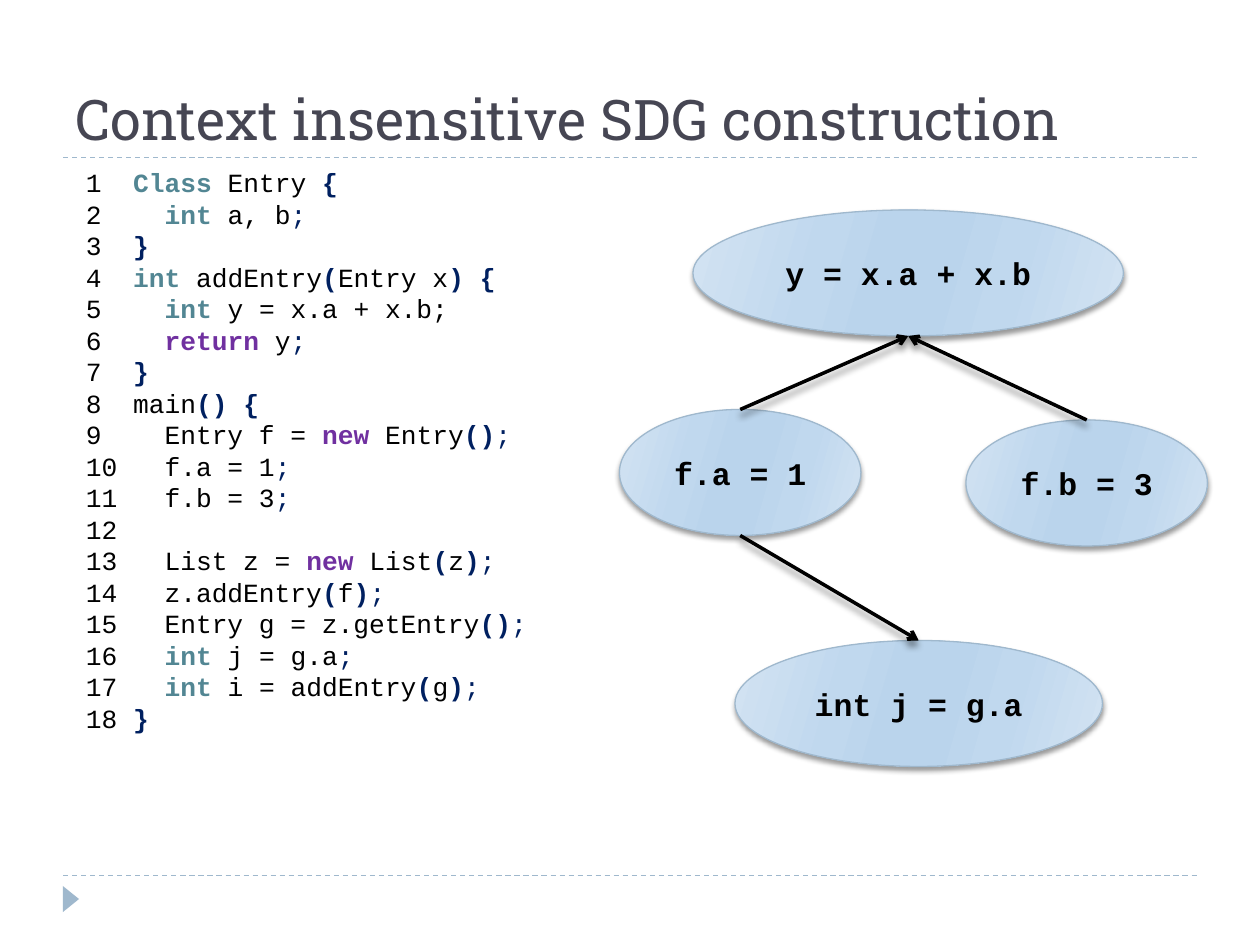
import itertools
import pptx
import pptx.util
import pptx.dml.color
import pptx.enum.dml
import pptx.enum.shapes
import pptx.enum.text
import pptx.oxml
import pptx.oxml.ns

COLS, ROWS = 120, 90
UNIT = pptx.util.Inches(10) / COLS
MONO, SLAB = "Courier New", "Roboto Slab"
HUES = {"title": "464653", "edge": "9FB8CD", "ink": "000000", "type": "528693",
        "mark": "002060", "word": "7030A0"}
GLOW = ((0, "D3E3F2"), (30, "C0D8EE"), (45, "BAD4EC"),
        (55, "BAD4EC"), (73, "C0D8EE"), (100, "D3E3F2"))
WORDS = {"Class": "type", "int": "type", "return": "word", "new": "word"}
PLAIN = {5}
CODE = """Class Entry {
  int a, b;
}
int addEntry(Entry x) {
  int y = x.a + x.b;
  return y;
}
main() {
  Entry f = new Entry();
  f.a = 1;
  f.b = 3;

  List z = new List(z);
  z.addEntry(f);
  Entry g = z.getEntry();
  int j = g.a;
  int i = addEntry(g);
}""".split("\n")
NODES = {"sum": ("y = x.a + x.b", (66, 20, 41, 12)),
         "first": ("f.a = 1", (59, 39, 23, 12)),
         "second": ("f.b = 3", (92, 40, 23, 12)),
         "read": ("int j = g.a", (70, 61, 35, 12))}
LINKS = (("first", "top", "sum", "base"), ("second", "top", "sum", "base"),
         ("first", "base", "read", "top"))


def grid(*cells):
    """Turn grid cells into lengths."""
    return [pptx.util.Emu(round(cell * UNIT)) for cell in cells]


def hue(name):
    """Return a named colour."""
    return pptx.dml.color.RGBColor.from_string(HUES[name])


def style(font, size, face, tone, bold=False):
    """Set the look of a font."""
    font.size, font.name, font.bold = pptx.util.Pt(size), face, bold
    font.color.rgb = hue(tone)


def parse(text):
    """Build an XML element from a DrawingML string."""
    head, tail = text.split(" ", 1)
    return pptx.oxml.parse_xml(f"{head} {pptx.oxml.ns.nsdecls('a')} {tail}")


def shade(item, blur, drop):
    """Cast a soft shadow straight down."""
    item._element.spPr.append(parse(
        f'<a:effectLst ><a:outerShdw blurRad="{pptx.util.Pt(blur)}" '
        f'dist="{pptx.util.Pt(drop)}" dir="5400000" rotWithShape="0">'
        '<a:srgbClr val="000000"><a:alpha val="40000"/></a:srgbClr>'
        '</a:outerShdw></a:effectLst>'))


def draw(slide, start, end, tone, width):
    """Draw a straight line between two grid points."""
    line = slide.shapes.add_connector(
        pptx.enum.shapes.MSO_CONNECTOR.STRAIGHT, *grid(*start, *end))
    line.line.color.rgb = hue(tone)
    line.line.width = pptx.util.Pt(width)
    return line


def rule(slide, box):
    """Draw a dashed rule along the top of a box."""
    left, top, width, _ = box
    line = draw(slide, (left, top), (left + width, top), "edge", 0.75)
    line.line.dash_style = pptx.enum.dml.MSO_LINE.DASH
    line._element.spPr.append(parse("<a:effectLst />"))


def foot(slide, box):
    """Draw the footer rule with its pointer."""
    rule(slide, box)
    left, top, _, _ = box
    mark = slide.shapes.add_shape(pptx.enum.shapes.MSO_SHAPE.ISOSCELES_TRIANGLE,
                                  *grid(left - 0.5, top + 1.45, 2.5, 1.55))
    mark.rotation = 90
    mark.shadow.inherit = False
    mark.fill.solid()
    mark.fill.fore_color.rgb = hue("edge")
    mark.line.fill.background()


def title(slide, box):
    """Place the heading at the foot of its box."""
    frame = slide.shapes.add_textbox(*grid(*box)).text_frame
    frame.word_wrap = True
    frame.vertical_anchor = pptx.enum.text.MSO_ANCHOR.BOTTOM
    para = frame.paragraphs[0]
    para.text = "Context insensitive SDG construction"
    style(para.font, 32, SLAB, "title")


def kind(char):
    """Sort a character into its token class."""
    return "word" if char.isalnum() else char if char == ";" else \
        "brace" if char in "(){}" else "other"


def tokens(line, plain):
    """Yield each token with its colour and weight."""
    for sort, chars in itertools.groupby(line, kind):
        text = "".join(chars)
        tone = WORDS.get(text, "ink")
        if sort == "brace" or sort == ";" and not plain:
            tone = "mark"
        yield text, tone, tone != "ink" and sort != ";"


def code(slide, box):
    """List the numbered program with coloured syntax."""
    frame = slide.shapes.add_textbox(*grid(*box)).text_frame
    frame.word_wrap = True
    frame.margin_top = pptx.util.Inches(0.07)
    for num, line in enumerate(CODE, 1):
        para = frame.paragraphs[0] if num == 1 else frame.add_paragraph()
        para.line_spacing = pptx.util.Pt(18)
        label = f"{num:<3}" if line else str(num)
        for text, tone, bold in [(label, "ink", False), *tokens(line, num in PLAIN)]:
            run = para.add_run()
            run.text = text
            style(run.font, 15, MONO, tone, bold)


def node(slide, text, box):
    """Place one shaded ellipse with its statement."""
    oval = slide.shapes.add_shape(pptx.enum.shapes.MSO_SHAPE.OVAL, *grid(*box))
    oval.fill.gradient()
    fill = oval._element.spPr.find(pptx.oxml.ns.qn("a:gradFill"))
    stops = fill.find(pptx.oxml.ns.qn("a:gsLst"))
    stops[:] = [parse(f'<a:gs pos="{pos * 1000}"><a:srgbClr val="{tint}"/></a:gs>')
                for pos, tint in GLOW]
    fill.find(pptx.oxml.ns.qn("a:lin")).set("ang", str(16 * 60000))
    oval.line.color.rgb = hue("edge")
    oval.line.width = pptx.util.Pt(0.75)
    shade(oval, 3, 2)
    frame = oval.text_frame
    frame.vertical_anchor = pptx.enum.text.MSO_ANCHOR.MIDDLE
    para = frame.paragraphs[0]
    para.text = text
    para.alignment = pptx.enum.text.PP_ALIGN.CENTER
    style(para.font, 18, MONO, "ink", True)


def port(name, side):
    """Find the top or base point of a node."""
    left, top, width, height = NODES[name][1]
    return left + width / 2, top + (height if side == "base" else 0)


def graph(slide):
    """Draw the dependence graph."""
    for text, box in NODES.values():
        node(slide, text, box)
    for tail, out, head, into in LINKS:
        line = draw(slide, port(tail, out), port(head, into), "ink", 2)
        line.line._get_or_add_ln().append(parse('<a:tailEnd type="arrow"/>'))
        shade(line, 4, 3.4)


def main():
    """Build and save the slide."""
    deck = pptx.Presentation()
    deck.slide_width, deck.slide_height = grid(COLS, ROWS)
    slide = deck.slides.add_slide(deck.slide_layouts[6])
    foot(slide, (6, 83.4, 108, 6))
    rule(slide, (6, 15, 108, 1))
    title(slide, (6, 2, 108, 13))
    code(slide, (7, 15, 64, 55.7))
    graph(slide)
    deck.save("out.pptx")


if __name__ == "__main__":
    main()
